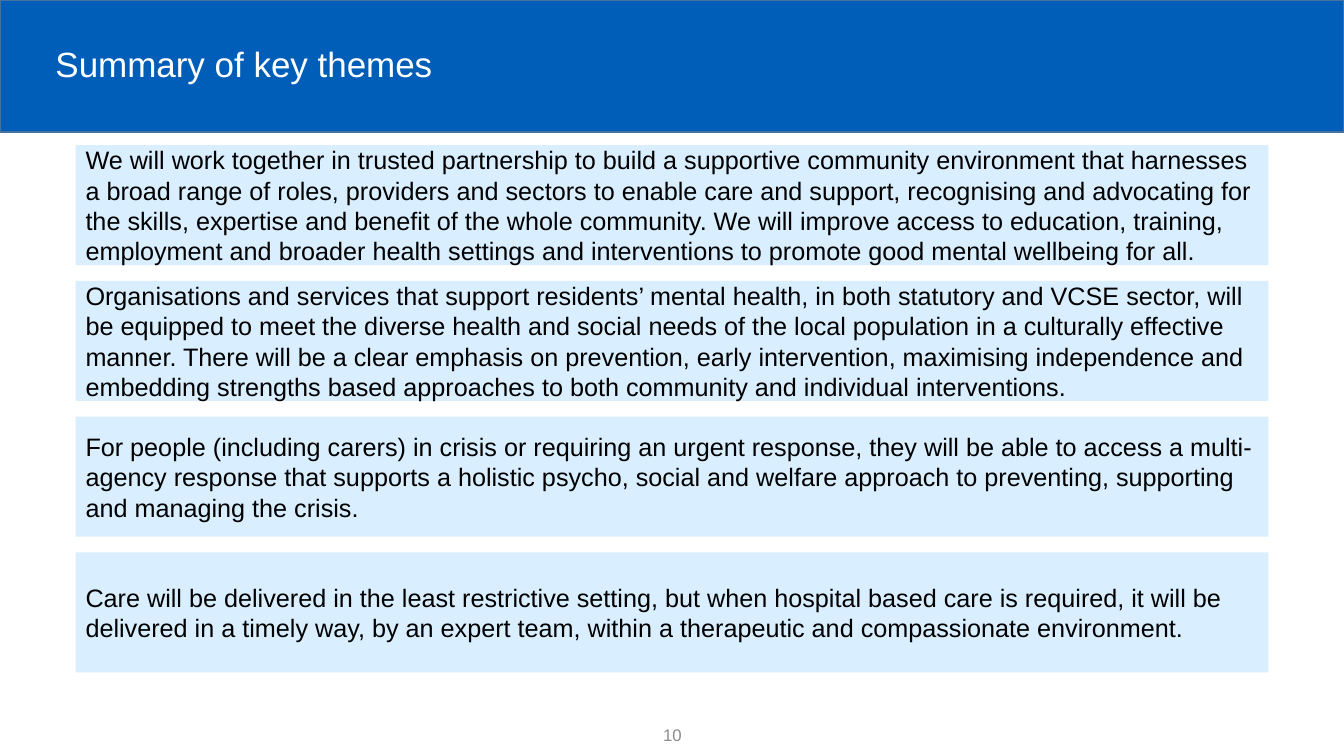
from pptx import Presentation
from pptx.dml.color import RGBColor
from pptx.enum.shapes import MSO_SHAPE
from pptx.enum.text import MSO_ANCHOR, MSO_AUTO_SIZE, PP_ALIGN
from pptx.util import Inches, Pt


def rgb(value):
    return RGBColor.from_string(value)


def write(sp, text, size=18, color="000000", align=PP_ALIGN.LEFT, spacing=1.0):
    tf = sp.text_frame
    tf.word_wrap = True
    tf.auto_size = MSO_AUTO_SIZE.NONE
    tf.vertical_anchor = MSO_ANCHOR.MIDDLE
    p = tf.paragraphs[0]
    p.alignment = align
    p.line_spacing = spacing
    r = p.add_run()
    r.text = text
    r.font.name = "Arial"
    r.font.size = Pt(size)
    r.font.color.rgb = rgb(color)


prs = Presentation()
prs.slide_width = Inches(13.33)
prs.slide_height = Inches(7.5)
s = prs.slides.add_slide(prs.slide_layouts[5])

# Header band, placed behind the title
band = s.shapes.add_shape(MSO_SHAPE.RECTANGLE, 0, 0, prs.slide_width, Inches(1.31))
band.shadow.inherit = False
band.fill.solid()
band.fill.fore_color.rgb = rgb("005EB8")
band.line.color.rgb = rgb("43739E")
band.line.width = Pt(1)

# Title
title = s.shapes.title
title.element.addprevious(band.element)
title.left, title.top = Inches(0.45), Inches(0.36)
title.width, title.height = Inches(12.44), Inches(0.59)
write(title, "Summary of key themes", size=25, color="FFFFFF", spacing=0.9)

# Theme panels
themes = [
    "We will work together in trusted partnership to build a supportive community "
    "environment that harnesses a broad range of roles, providers and sectors to enable "
    "care and support, recognising and advocating for the skills, expertise and benefit "
    "of the whole community. We will improve access to education, training, employment "
    "and broader health settings and interventions to promote good mental wellbeing for all.",
    "Organisations and services that support residents’ mental health, in both statutory "
    "and VCSE sector, will be equipped to meet the diverse health and social needs of the "
    "local population in a culturally effective manner. There will be a clear emphasis on "
    "prevention, early intervention, maximising independence and embedding strengths based "
    "approaches to both community and individual interventions.",
    "For people (including carers) in crisis or requiring an urgent response, they will be "
    "able to access a multi-agency response that supports a holistic psycho, social and "
    "welfare approach to preventing, supporting and managing the crisis.",
    "Care will be delivered in the least restrictive setting, but when hospital based care "
    "is required, it will be delivered in a timely way, by an expert team, within a "
    "therapeutic and compassionate environment.",
]
for i, theme in enumerate(themes):
    sp = s.shapes.add_shape(MSO_SHAPE.RECTANGLE, Inches(0.75), Inches(1.44 + 1.347 * i),
                            Inches(11.83), Inches(1.19))
    sp.shadow.inherit = False
    sp.fill.solid()
    sp.fill.fore_color.rgb = rgb("D9EFFF")
    sp.line.fill.background()
    write(sp, theme)

# Page number
number = s.shapes.add_textbox(Inches(5.17), Inches(7.09), Inches(3), Inches(0.4))
write(number, "10", size=12, color="8C8C8C", align=PP_ALIGN.CENTER)

prs.save("out.pptx")
